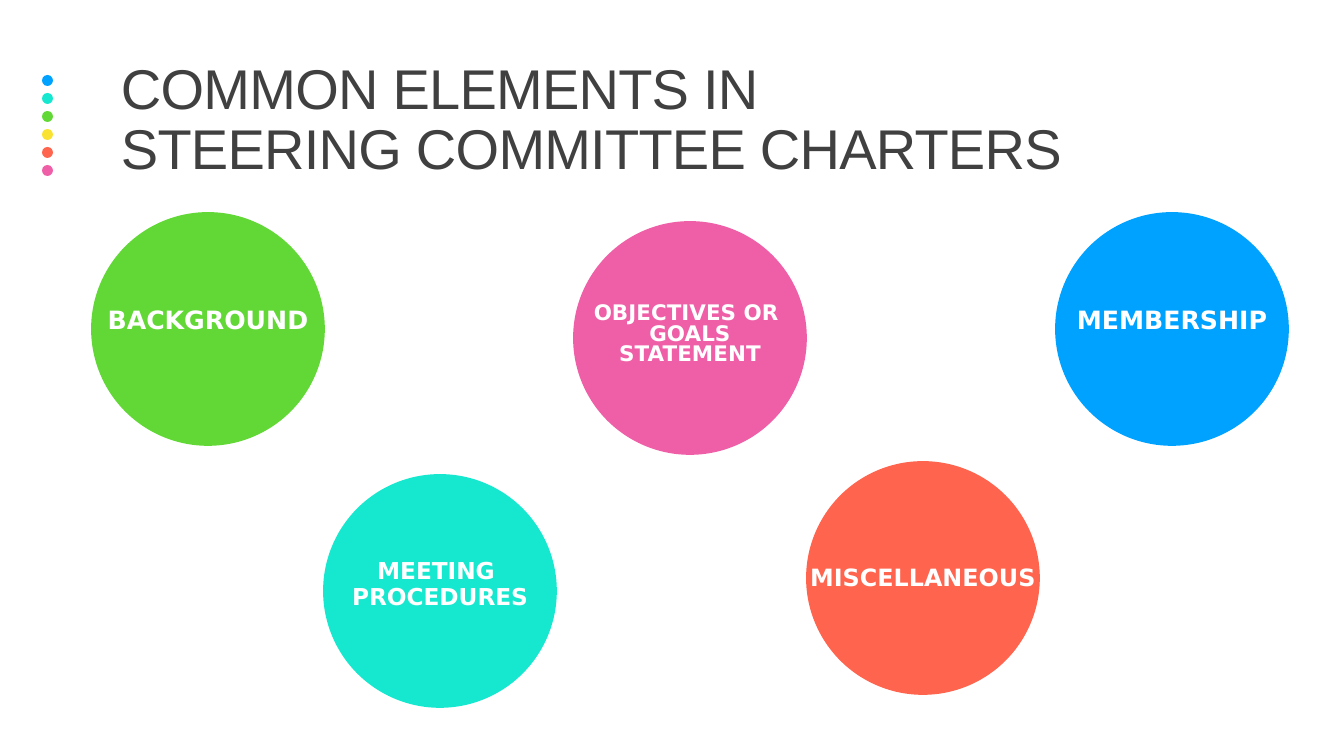
from dataclasses import dataclass

from pptx import Presentation
from pptx import util as u
from pptx.dml.color import RGBColor
from pptx.enum import shapes, text

EMU_PER_PX = 914400 / 100.8


@dataclass(frozen=True)
class Theme:
    blue: str = "00A2FF"
    teal: str = "16E7CF"
    green: str = "61D836"
    yellow: str = "FAE232"
    coral: str = "FF644E"
    pink: str = "EF5FA7"
    ink: str = "404040"
    white: str = "FFFFFF"
    title_font: str = "Arial"
    label_font: str = "DejaVu Sans"
    title_size: float = 40
    label_large: float = 18
    label_medium: float = 17
    label_small: float = 16.6
    label_smallest: float = 15.3


THEME = Theme()
CIRCLE_SIZE = 232
LABEL_WIDTH = 322
DOT_SIZE = 11
DOT_PITCH = 18


def px(length):
    return u.Emu(round(length * EMU_PER_PX))


def add_circle(slide, left, top, size, color, outlined=False):
    circle = slide.shapes.add_shape(
        shapes.MSO_SHAPE.OVAL, px(left), px(top), px(size), px(size))
    circle.shadow.inherit = False
    circle.fill.solid()
    circle.fill.fore_color.rgb = RGBColor.from_string(color)
    if outlined:
        circle.line.color.rgb = RGBColor.from_string(color)
        circle.line.width = u.Pt(1.25)
    else:
        circle.line.fill.background()


def add_text(slide, content, left, top, width, height, *, font, size, color,
             bold=False, align=text.PP_ALIGN.LEFT, line_spacing=1.0,
             before=0, after=0, side_inset=10, tracking=0):
    frame = slide.shapes.add_textbox(
        px(left), px(top), px(width), px(height)).text_frame
    frame.word_wrap = True
    frame.vertical_anchor = text.MSO_ANCHOR.MIDDLE
    frame.margin_left = frame.margin_right = px(side_inset)
    paragraph = frame.paragraphs[0]
    paragraph.alignment = align
    paragraph.line_spacing = line_spacing
    paragraph.space_before = u.Pt(before)
    paragraph.space_after = u.Pt(after)
    for index, line in enumerate(content.split("\n")):
        if index:
            paragraph.add_line_break()
        run = paragraph.add_run()
        run.text = line
        run.font.name = font
        run.font.size = u.Pt(size)
        run.font.bold = bold
        run.font.color.rgb = RGBColor.from_string(color)
        if tracking:
            run.font._element.set("spc", str(round(tracking * 100)))


def add_element(slide, label, left, top, color, label_top, size,
                label_height=64, line_spacing=1.0):
    add_circle(slide, left, top, CIRCLE_SIZE, color, outlined=True)
    add_text(slide, label, left - (LABEL_WIDTH - CIRCLE_SIZE) // 2, label_top,
             LABEL_WIDTH, label_height, font=THEME.label_font, size=size,
             color=THEME.white, bold=True, align=text.PP_ALIGN.CENTER,
             line_spacing=line_spacing, before=12, after=2)


def main():
    deck = Presentation()
    deck.slide_width, deck.slide_height = px(1344), px(756)
    slide = deck.slides.add_slide(deck.slide_layouts[6])

    dot_colors = (THEME.blue, THEME.teal, THEME.green,
                  THEME.yellow, THEME.coral, THEME.pink)
    for index, color in enumerate(dot_colors):
        add_circle(slide, 42, 75 + index * DOT_PITCH, DOT_SIZE, color)

    add_text(slide, "COMMON ELEMENTS IN \nSTEERING COMMITTEE CHARTERS",
             121, 46, 1109, 151, font=THEME.title_font, size=THEME.title_size,
             color=THEME.ink, line_spacing=0.9, side_inset=0, tracking=-0.5)

    add_element(slide, "BACKGROUND", 92, 213, THEME.green, 287,
                THEME.label_large)
    add_element(slide, "OBJECTIVES OR \nGOALS\nSTATEMENT", 574, 222,
                THEME.pink, 297, THEME.label_smallest,
                label_height=76, line_spacing=0.8)
    add_element(slide, "MEMBERSHIP", 1056, 213, THEME.blue, 287,
                THEME.label_large)
    add_element(slide, "MEETING \nPROCEDURES", 324, 475, THEME.teal, 553,
                THEME.label_small, line_spacing=0.9)
    add_element(slide, "MISCELLANEOUS", 807, 462, THEME.coral, 545,
                THEME.label_medium)

    deck.save("out.pptx")


if __name__ == "__main__":
    main()
